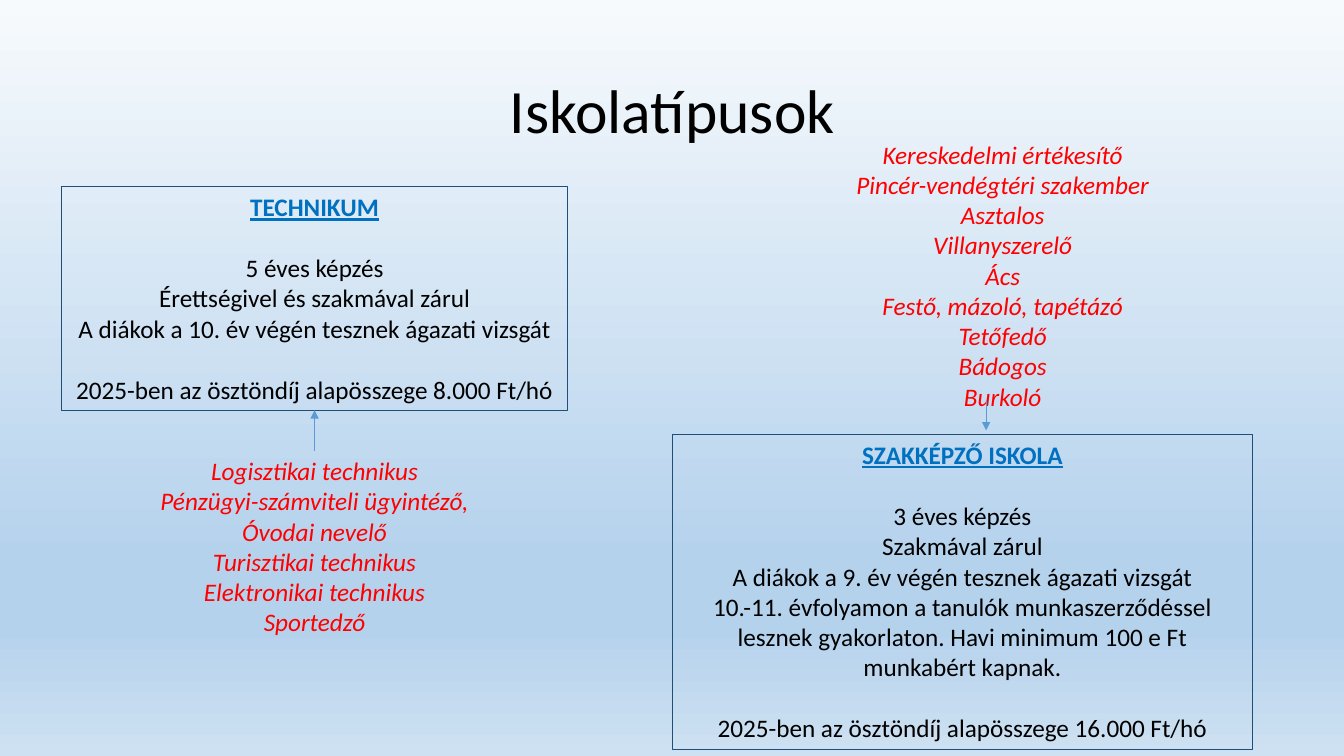
import pptx
import pptx.util
import pptx.dml.color
import pptx.enum.shapes
import pptx.enum.text
import pptx.oxml
import pptx.oxml.ns
from lxml import etree

WIDTH, HEIGHT = 13.33, 7.5
FONT = "Calibri"
BLACK, BLUE, RED, NAVY, SKY = "000000", "0070C0", "FF0000", "1F4E79", "5B9BD5"
BACKGROUND = [(0, "F7FAFD"), (74, "B5D2EC"), (83, "B5D2EC"), (100, "CEE1F2")]
BLANK_LINE = 22

TITLE = "Iskolatípusok"
TITLE_AREA = (0.92, 0.4, 11.5, 1.45)

SCHOOLS = [
    {
        "name": "TECHNIKUM",
        "facts": ["5 éves képzés", "Érettségivel és szakmával zárul",
                  "A diákok a 10. év végén tesznek ágazati vizsgát"],
        "grant": "2025-ben az ösztöndíj alapösszege 8.000 Ft/hó",
        "card": (0.61, 1.85, 5.02, 2.22),
        "jobs": ["Logisztikai technikus", "Pénzügyi-számviteli ügyintéző,",
                 "Óvodai nevelő", "Turisztikai technikus",
                 "Elektronikai technikus", "Sportedző"],
        "jobs_area": (0.61, 4.47, 5.02, 1.92),
        "arrow": (3.12, 4.47, 4.07),
    },
    {
        "name": "SZAKKÉPZŐ ISKOLA",
        "facts": ["3 éves képzés", "Szakmával zárul",
                  "A diákok a 9. év végén tesznek ágazati vizsgát",
                  "10.-11. évfolyamon a tanulók munkaszerződéssel lesznek "
                  "gyakorlaton. Havi minimum 100 e Ft munkabért kapnak."],
        "grant": "2025-ben az ösztöndíj alapösszege 16.000 Ft/hó",
        "card": (6.67, 4.31, 5.75, 3.13),
        "jobs": ["Kereskedelmi értékesítő", "Pincér-vendégtéri szakember",
                 "Asztalos", "Villanyszerelő", "Ács",
                 "Festő, mázoló, tapétázó", "Tetőfedő", "Bádogos", "Burkoló"],
        "jobs_area": (7.07, 1.33, 5.75, 2.83),
        "arrow": (9.78, 3.97, 4.27),
    },
]


def rgb(value):
    return pptx.dml.color.RGBColor.from_string(value)


def inches(values):
    return [pptx.util.Inches(v) for v in values]


def write(tf, lines, color, size=18, italic=False):
    tf.word_wrap = True
    for i, line in enumerate(lines):
        p = tf.paragraphs[0] if i == 0 else tf.add_paragraph()
        p.text = line
        p.alignment = pptx.enum.text.PP_ALIGN.CENTER
        p.font.name = FONT
        p.font.size = pptx.util.Pt(size)
        p.font.italic = italic
        p.font.color.rgb = rgb(color)


def paint_background(s):
    fill = s.background.fill
    fill.gradient()
    fill.gradient_angle = 270
    qn = pptx.oxml.ns.qn
    stops = next(s._element.iter(qn("a:gsLst")))
    for stop in list(stops):
        stops.remove(stop)
    for percent, color in BACKGROUND:
        stop = etree.SubElement(stops, qn("a:gs"), pos=str(percent * 1000))
        etree.SubElement(stop, qn("a:srgbClr"), val=color)


def add_title(s):
    tf = s.shapes.add_textbox(*inches(TITLE_AREA)).text_frame
    write(tf, [TITLE], BLACK, size=44)
    tf.vertical_anchor = pptx.enum.text.MSO_ANCHOR.MIDDLE
    tf.paragraphs[0].line_spacing = 0.9


def add_card(s, school):
    sp = s.shapes.add_shape(pptx.enum.shapes.MSO_SHAPE.RECTANGLE, *inches(school["card"]))
    sp.shadow.inherit = False
    sp.fill.background()
    sp.line.color.rgb = rgb(NAVY)
    sp.line.width = pptx.util.Pt(0.75)
    tf = sp.text_frame
    tf.vertical_anchor = pptx.enum.text.MSO_ANCHOR.TOP
    write(tf, [school["name"], *school["facts"], school["grant"]], BLACK)
    heading, first_fact, *_, grant = tf.paragraphs
    heading.font.bold = True
    heading.font.underline = True
    heading.font.color.rgb = rgb(BLUE)
    for p in (first_fact, grant):
        p.space_before = pptx.util.Pt(BLANK_LINE)


def add_jobs(s, school):
    tf = s.shapes.add_textbox(*inches(school["jobs_area"])).text_frame
    write(tf, school["jobs"], RED, italic=True)


def add_arrow(s, school):
    x, start, end = school["arrow"]
    line = s.shapes.add_connector(pptx.enum.shapes.MSO_CONNECTOR.STRAIGHT,
                                  *inches((x, start, x, end)))
    line.line.color.rgb = rgb(SKY)
    line.line.width = pptx.util.Pt(0.5)
    qn = pptx.oxml.ns.qn
    etree.SubElement(line.line._get_or_add_ln(), qn("a:tailEnd"), type="triangle")
    etree.SubElement(line._element.spPr, qn("a:effectLst"))


def main():
    prs = pptx.Presentation()
    prs.slide_width, prs.slide_height = inches((WIDTH, HEIGHT))
    s = prs.slides.add_slide(prs.slide_layouts[6])
    paint_background(s)
    add_title(s)
    for add_part in (add_card, add_jobs, add_arrow):
        for school in SCHOOLS:
            add_part(s, school)
    prs.save("out.pptx")


if __name__ == "__main__":
    main()
